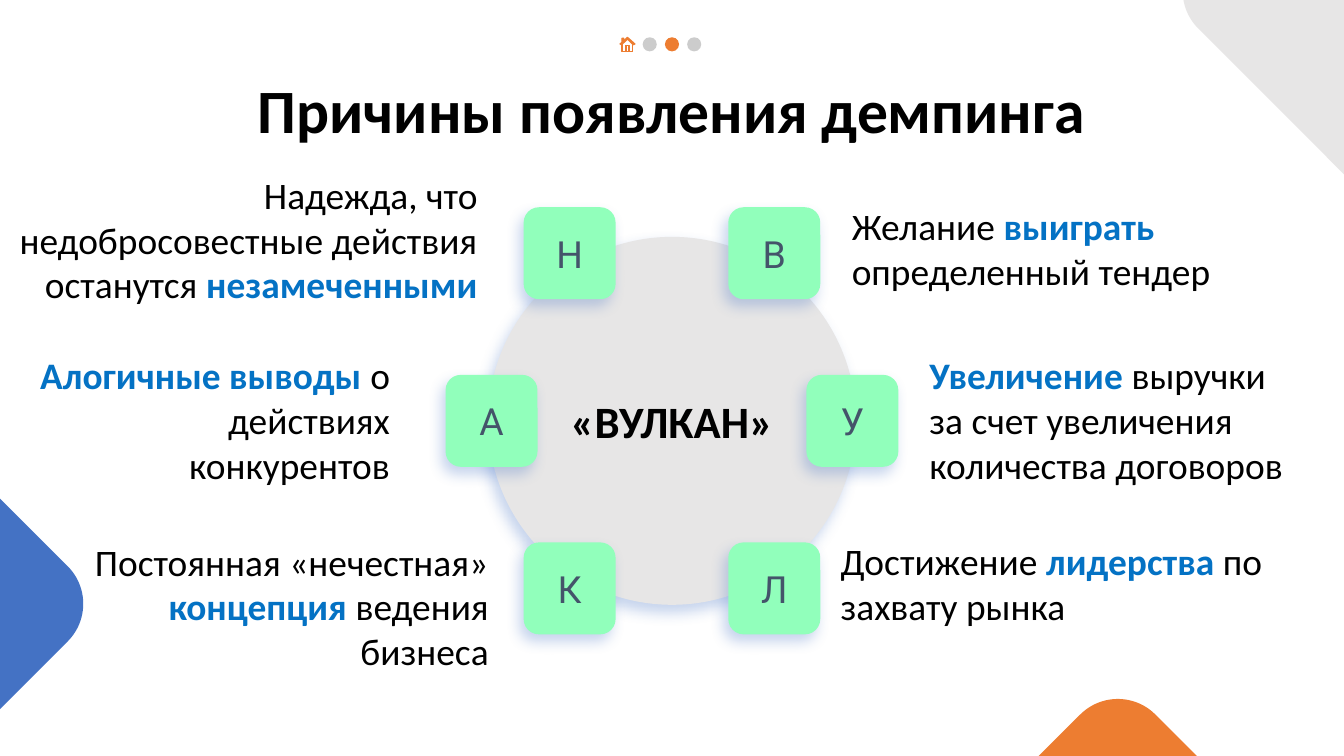
import pptx
import pptx.util
import pptx.dml.color
import pptx.enum.shapes
import pptx.enum.text
import pptx.oxml
import pptx.oxml.ns

RGBColor = pptx.dml.color.RGBColor
Shape = pptx.enum.shapes.MSO_SHAPE
Align = pptx.enum.text.PP_ALIGN
Anchor = pptx.enum.text.MSO_ANCHOR

BLACK = RGBColor(0x00, 0x00, 0x00)
ACCENT = RGBColor(0x04, 0x72, 0xC4)
SLATE = RGBColor(0x44, 0x54, 0x6A)
MINT = RGBColor(0x91, 0xFF, 0xBB)
LIGHT = RGBColor(0xE7, 0xE6, 0xE6)
GREY = RGBColor(0xB0, 0xB0, 0xB0)
ORANGE = RGBColor(0xED, 0x7D, 0x31)
BLUE = RGBColor(0x44, 0x72, 0xC4)

# The grid has square cells, twelve to the inch
COLUMNS, ROWS = 160, 90
CELL = pptx.util.Inches(1 / 12)


def cells(*lengths):
    return [round(length * CELL) for length in lengths]


def write_text(frame, text, size=26.7, font="Calibri", color=BLACK, bold=False,
               align=Align.LEFT, anchor=Anchor.MIDDLE, spacing=None):
    """Write one paragraph; parts between asterisks are bold in the accent colour."""
    frame.word_wrap = True
    frame.vertical_anchor = anchor
    inset = pptx.util.Inches(0.13)
    frame.margin_left = frame.margin_right = inset
    frame.margin_top = frame.margin_bottom = inset
    paragraph = frame.paragraphs[0]
    paragraph.alignment = align
    paragraph.line_spacing = spacing
    for index, part in enumerate(text.split("*")):
        if part:
            strong = index % 2 == 1
            run = paragraph.add_run()
            run.text = part
            run.font.size = pptx.util.Pt(size)
            run.font.name = font
            run.font.bold = bold or strong
            run.font.color.rgb = ACCENT if strong else color


class GridSlide:
    tile_size = 10.95
    label_height = 7.92
    shadow = (
        f'<a:outerShdw {pptx.oxml.ns.nsdecls("a")} blurRad="128270" dist="76200" '
        f'dir="7200000" algn="ctr" rotWithShape="0"><a:srgbClr val="{BLUE}">'
        '<a:alpha val="30000"/></a:srgbClr></a:outerShdw>')

    def __init__(self, slide):
        self.slide = slide

    def figure(self, kind, center, size, fill, rotation=0, shadow=False, alpha=None):
        x, y = center
        box = cells(x - size / 2, y - size / 2, size, size)
        figure = self.slide.shapes.add_shape(kind, *box)
        figure.rotation = rotation
        figure.fill.solid()
        figure.fill.fore_color.rgb = fill
        figure.line.fill.background()
        figure.shadow.inherit = False
        properties = figure._element.spPr
        if shadow:
            effects = properties.find(pptx.oxml.ns.qn("a:effectLst"))
            effects.append(pptx.oxml.parse_xml(self.shadow))
        if alpha:
            tint = properties.find(".//" + pptx.oxml.ns.qn("a:srgbClr"))
            tint.append(pptx.oxml.parse_xml(
                f'<a:alpha {pptx.oxml.ns.nsdecls("a")} val="{alpha * 1000}"/>'))
        return figure

    def tile(self, letter, center):
        tile = self.figure(Shape.ROUNDED_RECTANGLE, center, self.tile_size, MINT, shadow=True)
        write_text(tile.text_frame, letter, font="Roboto", color=SLATE, align=Align.CENTER)

    def text(self, text, left, top, width, height=label_height, **style):
        box = self.slide.shapes.add_textbox(*cells(left, top, width, height))
        write_text(box.text_frame, text, **style)

    def outline(self, contours, left, top, color):
        """Draw closed contours given in thousandths of a cell."""
        start, *rest = contours[0]
        builder = self.slide.shapes.build_freeform(*start, scale=CELL / 1000)
        builder.add_line_segments(rest)
        for start, *rest in contours[1:]:
            builder.move_to(*start)
            builder.add_line_segments(rest)
        icon = builder.convert_to_shape(*cells(left, top))
        icon.fill.solid()
        icon.fill.fore_color.rgb = color
        icon.line.color.rgb = color
        icon.line.width = pptx.util.Pt(0.75)
        icon.shadow.inherit = False


def main():
    deck = pptx.Presentation()
    deck.slide_width, deck.slide_height = cells(COLUMNS, ROWS)
    page = GridSlide(deck.slides.add_slide(deck.slide_layouts[6]))

    # Corner decoration
    for center, color in (((165, -1.08), LIGHT), ((133.08, 107.4), ORANGE),
                          ((-14.28, 71.88), BLUE)):
        page.figure(Shape.ROUNDED_RECTANGLE, center, 37.92, color, rotation=315)

    # Title
    page.text("Причины появления демпинга", 12.6, 8.04, 134.76, 10.92, size=44, bold=True,
              align=Align.CENTER, anchor=Anchor.TOP, spacing=0.9)

    # Central circle
    hub_x, hub_y = COLUMNS / 2, 50.1
    hub = page.figure(Shape.OVAL, (hub_x, hub_y), 43.8, LIGHT, shadow=True)
    write_text(hub.text_frame, "«ВУЛКАН»", size=32, bold=True, align=Align.CENTER)

    # Letters around the circle, each with its reason: side, row, left, top, width
    reasons = (
        ("В", 1, -1, "Желание *выиграть *определенный тендер", 99.84, 28.56, 54.96),
        ("У", 1, 0, "*Увеличение *выручки за счет увеличения количества договоров",
         109.08, 51.6, 45.72),
        ("Л", 1, 1, "Достижение *лидерства* по захвату рынка", 98.52, 68.4, 54.96),
        ("К", -1, 1, "Постоянная «нечестная» *концепция *ведения бизнеса",
         6.48, 73.8, 53.28),
        ("А", -1, 0, "*Алогичные выводы *о действиях конкурентов", 2.28, 51.6, 45.72),
        ("Н", -1, -1, "Надежда, что недобросовестные действия останутся *незамеченными*",
         -1.68, 30.12, 60.12),
    )
    for letter, side, row, reason, left, top, width in reasons:
        reach = 12.18 if row else 21.48
        page.tile(letter, (hub_x + side * reach, hub_y + row * 19.95))
        page.text(reason, left, top, width, anchor=Anchor.BOTTOM,
                  align=Align.LEFT if side > 0 else Align.RIGHT)

    # Page dots
    for step in (-1, 0, 1):
        color, alpha = (GREY, 64) if step else (ORANGE, None)
        page.figure(Shape.OVAL, (hub_x + step * 2.65, 5.28), 1.68, color, alpha=alpha)

    # Home icon
    roof = ((0, 800), (900, 0), (1800, 800), (1600, 900), (900, 240), (200, 900))
    chimney = ((240, 120), (480, 120), (480, 300), (240, 500))
    walls = ((250, 900), (250, 1700), (1550, 1700), (1550, 900),
             (1500, 900), (1500, 1650), (300, 1650), (300, 900))
    door = ((700, 1650), (700, 960), (1100, 960), (1100, 1650),
            (1050, 1650), (1050, 1010), (750, 1010), (750, 1650))
    page.outline((roof, chimney, walls, door), 73.8, 4.44, ORANGE)

    deck.save("out.pptx")


if __name__ == "__main__":
    main()
